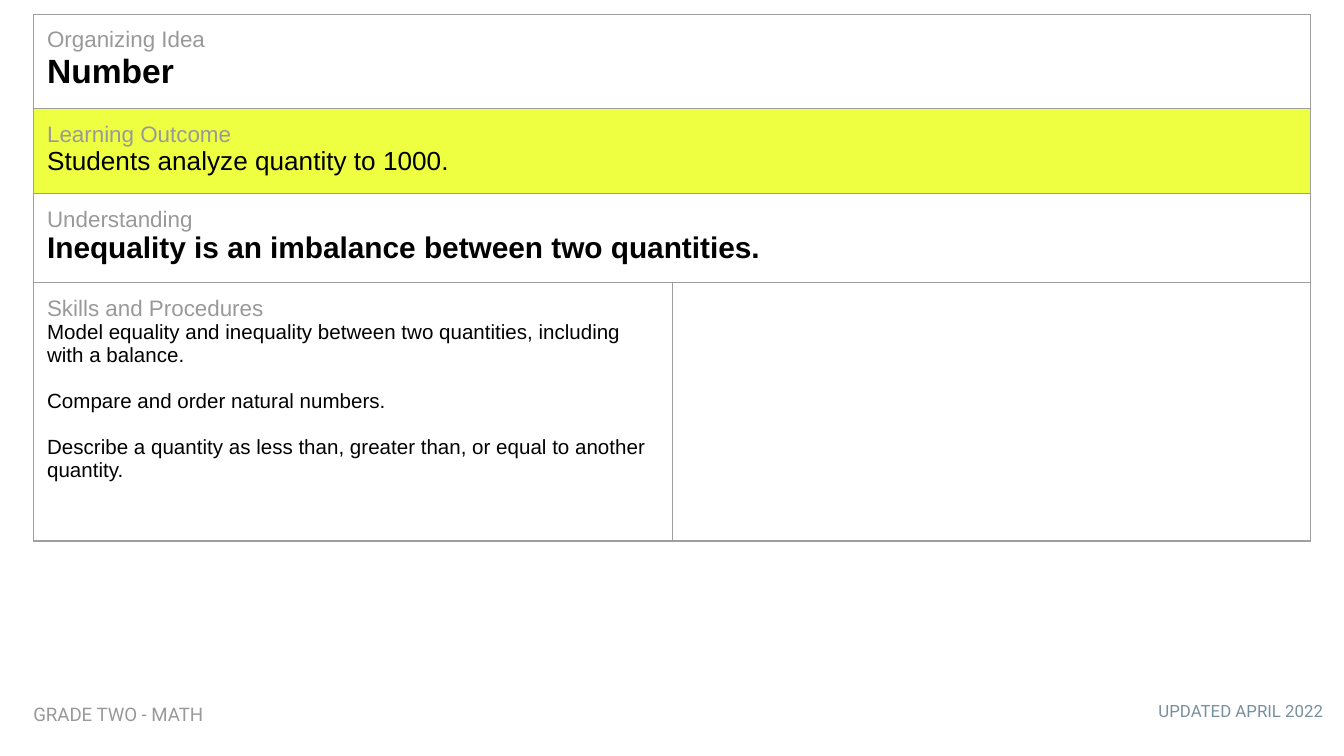
from pptx import Presentation
from pptx.dml.color import RGBColor
from pptx.enum.text import PP_ALIGN
from pptx.oxml import parse_xml
from pptx.oxml.ns import nsdecls
from pptx.util import Cm, Pt

BLACK = RGBColor(0x00, 0x00, 0x00)
GREY = RGBColor(0x99, 0x99, 0x99)
BORDER = RGBColor(0x9E, 0x9E, 0x9E)
SLATE = RGBColor(0x78, 0x90, 0x9C)
YELLOW = RGBColor(0xEE, 0xFF, 0x41)

ROWS = [
    ("Organizing Idea", ["Number"], 18, True, None, 1.78),
    ("Learning Outcome", ["Students analyze quantity to 1000."], 14, False, YELLOW, 1.61),
    ("Understanding", ["Inequality is an imbalance between two quantities."], 16, True, None, 1.68),
    ("Skills and Procedures", [
        "Model equality and inequality between two quantities, including with a balance.",
        "Compare and order natural numbers.",
        "Describe a quantity as less than, greater than, or equal to another quantity.",
    ], 11, False, None, 4.88),
]


class CurriculumSlide:
    body_font = "Arial"
    label_font = "Roboto"
    inset = Cm(0.25)

    def __init__(self, prs):
        self.s = prs.slides.add_slide(prs.slide_layouts[6])

    def set_insets(self, target):
        target.margin_left = target.margin_right = self.inset
        target.margin_top = target.margin_bottom = self.inset

    def fill_paragraph(self, p, text, size, color, font, bold=False):
        p.text = text
        p.font.name = font
        p.font.size = Pt(size)
        p.font.bold = bold
        p.font.color.rgb = color

    def label(self, x, y, w, h, text, size, color, align=PP_ALIGN.LEFT):
        tf = self.s.shapes.add_textbox(Cm(x), Cm(y), Cm(w), Cm(h)).text_frame
        tf.word_wrap = True
        self.set_insets(tf)
        p = tf.paragraphs[0]
        p.alignment = align
        self.fill_paragraph(p, text, size, color, self.label_font)

    def style_cell(self, cell, fill):
        self.set_insets(cell)
        tc_pr = cell._tc.get_or_add_tcPr()
        for side in "LRTB":
            tc_pr.append(parse_xml(
                f'<a:ln{side} {nsdecls("a")} w="{Pt(0.75)}"><a:solidFill>'
                f'<a:srgbClr val="{BORDER}"/></a:solidFill></a:ln{side}>'))
        if fill is None:
            cell.fill.background()
        else:
            cell.fill.solid()
            cell.fill.fore_color.rgb = fill

    def outcome_table(self, x, y, w, rows):
        height = sum(row[-1] for row in rows)
        table = self.s.shapes.add_table(len(rows), 2, Cm(x), Cm(y), Cm(w), Cm(height)).table
        table.first_row = table.horz_banding = False
        for i, (heading, lines, size, bold, fill, h) in enumerate(rows):
            table.rows[i].height = Cm(h)
            left, right = table.cell(i, 0), table.cell(i, 1)
            for cell in (left, right):
                self.style_cell(cell, fill)
            if i < len(rows) - 1:
                left.merge(right)
            tf = left.text_frame
            self.fill_paragraph(tf.paragraphs[0], heading, 12, GREY, self.body_font)
            for n, line in enumerate(lines):
                p = tf.add_paragraph()
                self.fill_paragraph(p, line, size, BLACK, self.body_font, bold)
                if n:
                    p.space_before = Pt(12.5)


def main():
    prs = Presentation()
    prs.slide_width, prs.slide_height = Cm(25.4), Cm(14.29)
    slide = CurriculumSlide(prs)
    slide.label(18.39, 13.06, 6.86, 0.89, "UPDATED APRIL 2022", 9, SLATE, PP_ALIGN.RIGHT)
    slide.outcome_table(0.64, 0.27, 24.13, ROWS)
    slide.label(0.38, 13.08, 7.65, 0.94, "GRADE TWO - MATH", 10, GREY)
    prs.save("out.pptx")


if __name__ == "__main__":
    main()
